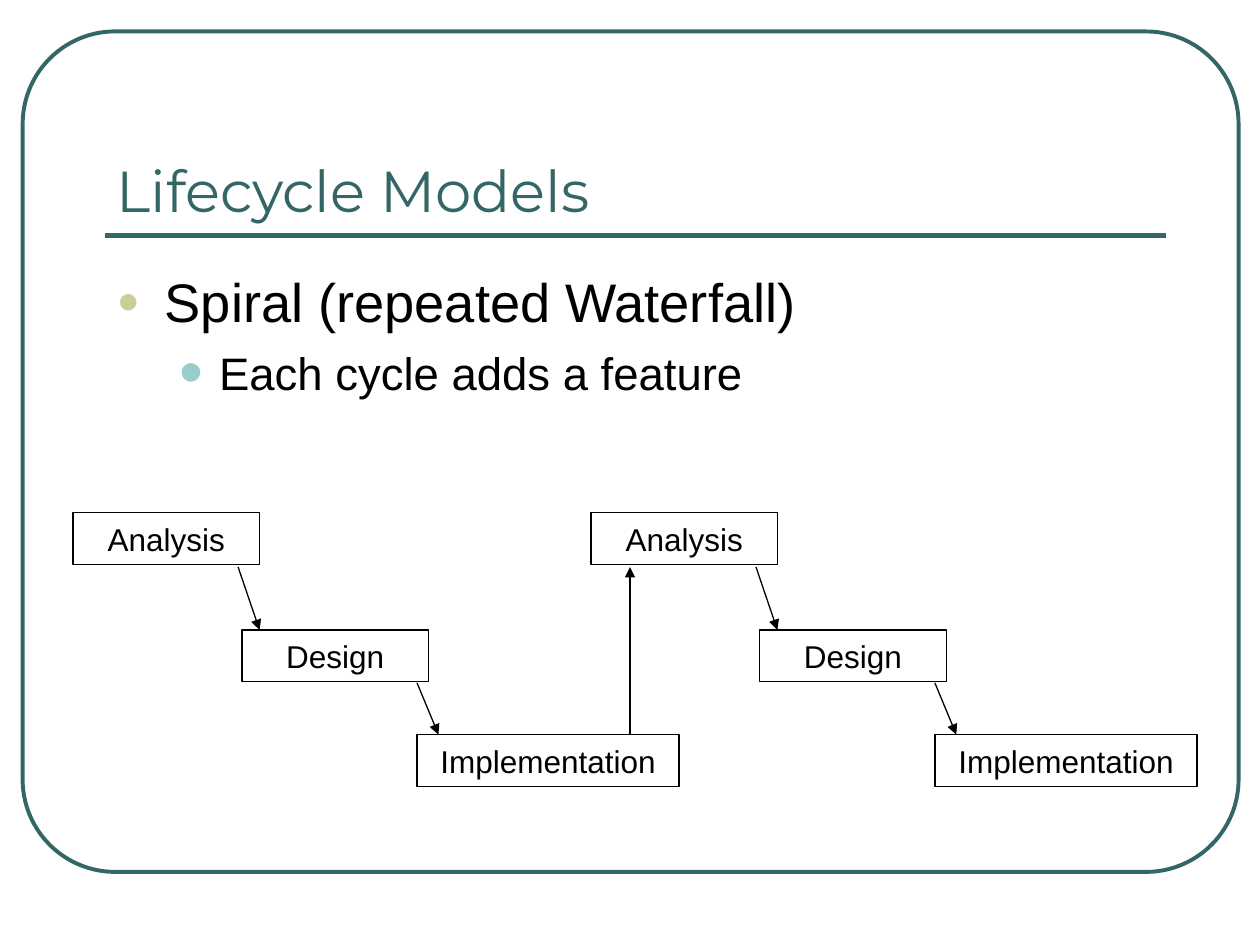
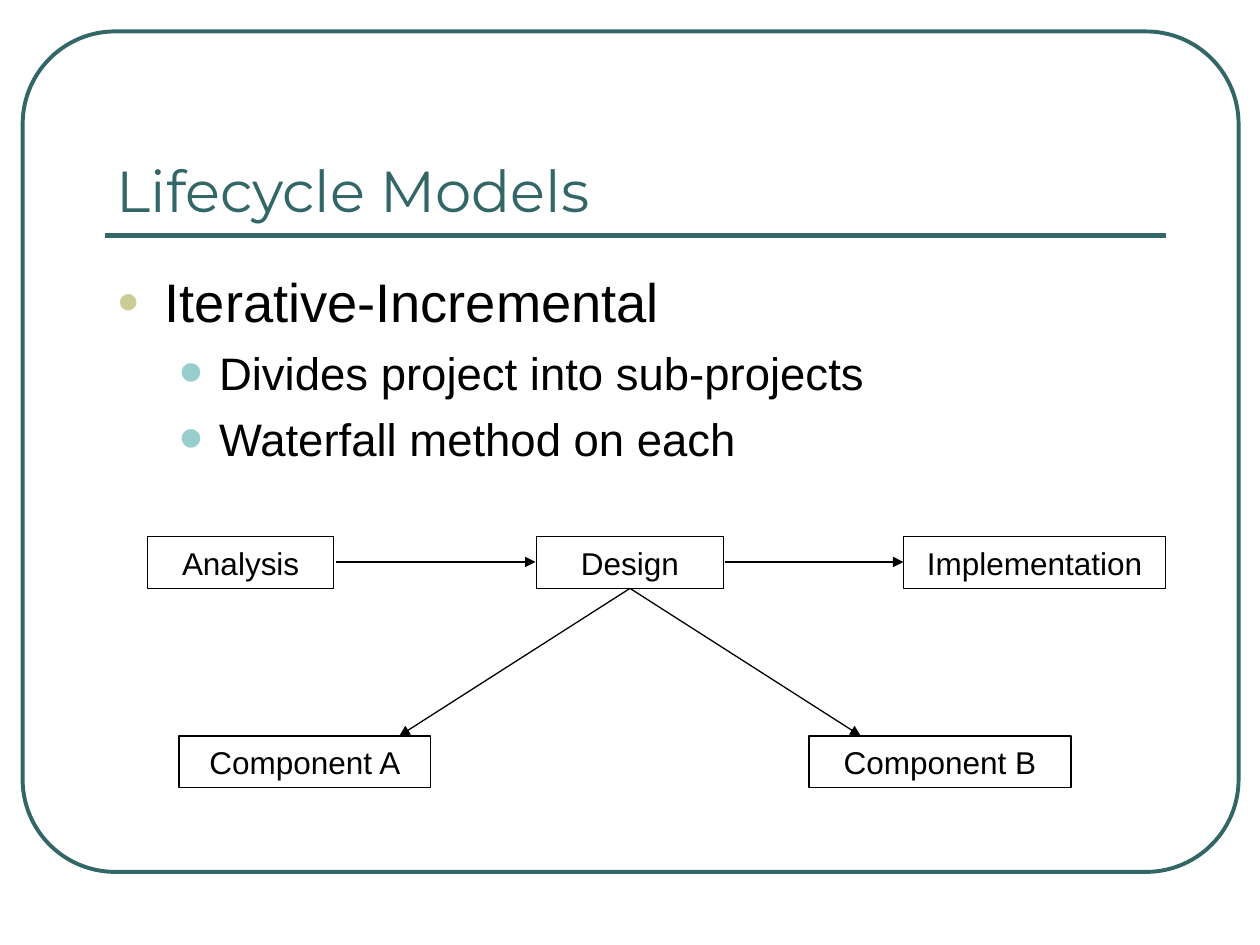
from lxml import etree
from pptx import Presentation
from pptx import util as u
from pptx.dml.color import RGBColor
from pptx.enum import shapes, text
from pptx.oxml import ns

TEAL = RGBColor(0x33, 0x66, 0x66)
BLACK = RGBColor(0, 0, 0)
KHAKI = RGBColor(0xCC, 0xCC, 0x99)
AQUA = RGBColor(0x97, 0xCD, 0xCC)

BOX_H = 0.41
# Bullet levels: size, space before, left margin, hanging indent, mark, mark colour, mark size %
LEVELS = [
    (31, 6, 0.38, 0.38, "●", KHAKI, 70),
    (26, 6.5, 0.81, 0.31, "•", AQUA, 150),
]


def add_text(tf, content, size=18, font="Arial", color=BLACK, align=text.PP_ALIGN.LEFT,
             anchor=text.MSO_ANCHOR.TOP, level=None):
    """Write one paragraph, using the first empty one if there is one."""
    p = tf.paragraphs[0] if not tf.paragraphs[0].runs else tf.add_paragraph()
    tf.word_wrap = True
    tf.vertical_anchor = anchor
    p.alignment = align
    if level is not None:
        size, before, left, hang, mark, mark_color, mark_size = LEVELS[level]
        p.level = level
        p.space_before = u.Pt(before)
        pPr = p._p.get_or_add_pPr()
        pPr.set("marL", str(u.Inches(left)))
        pPr.set("indent", str(-u.Inches(hang)))
        clr = etree.SubElement(pPr, ns.qn("a:buClr"))
        etree.SubElement(clr, ns.qn("a:srgbClr"), val=str(mark_color))
        etree.SubElement(pPr, ns.qn("a:buSzPct"), val=str(mark_size * 1000))
        etree.SubElement(pPr, ns.qn("a:buFont"), typeface="Arial")
        etree.SubElement(pPr, ns.qn("a:buChar"), char=mark)
    r = p.add_run()
    r.text = content
    r.font.size = u.Pt(size)
    r.font.name = font
    r.font.color.rgb = color


def add_line(s, x1, y1, x2, y2, color=BLACK, width=0.75, arrow=True):
    c = s.shapes.add_connector(shapes.MSO_CONNECTOR.STRAIGHT, *map(u.Inches, (x1, y1, x2, y2)))
    c.line.color.rgb = color
    c.line.width = u.Pt(width)
    if arrow:
        etree.SubElement(c.line._get_or_add_ln(), ns.qn("a:tailEnd"), type="triangle")
    etree.SubElement(c._element.spPr, ns.qn("a:effectLst"))


# Spiral: the same three-step waterfall, run twice
spiral_boxes, spiral_arrows = [], []
for dx in (0, 4.11):
    spiral_boxes += [
        ("Analysis", 0.58 + dx, 4.07, 1.48),
        ("Design", 1.92 + dx, 5, 1.48),
        ("Implementation", 3.31 + dx, 5.83, 2.08),
    ]
    spiral_arrows += [
        (1.89 + dx, 4.5, 2.06 + dx, 5),
        (3.31 + dx, 5.42, 3.48 + dx, 5.83),
    ]
spiral_arrows.append((5, 5.83, 5, 4.5))

# Iterative: one row of steps, with the design split into components
iterative_boxes = [
    ("Analysis", 1.17, 4.26, 1.48),
    ("Design", 4.26, 4.26, 1.48),
    ("Implementation", 7.17, 4.26, 2.08),
    ("Component A", 1.42, 5.84, 2),
    ("Component B", 6.42, 5.84, 2.08),
]
iterative_arrows = [(2.67, 4.46, 4.25, 4.46), (5.75, 4.46, 7.17, 4.46)]
iterative_arrows += [(5, 4.67, 5 + dx, 5.84) for dx in (-1.83, 1.83)]

SLIDES = [
    ([("Spiral (repeated Waterfall)", 0), ("Each cycle adds a feature", 1)],
     spiral_boxes, spiral_arrows),
    ([("Iterative-Incremental", 0), ("Divides project into sub-projects", 1),
      ("Waterfall method on each", 1)],
     iterative_boxes, iterative_arrows),
]

prs = Presentation()
prs.slide_width, prs.slide_height = u.Inches(10), u.Inches(7.5)

for bullets, boxes, arrows in SLIDES:
    s = prs.slides.add_slide(prs.slide_layouts[6])

    # Frame and title rule
    frame = s.shapes.add_shape(shapes.MSO_SHAPE.ROUNDED_RECTANGLE,
                               *map(u.Inches, (0.18, 0.25, 9.65, 6.67)))
    frame.adjustments[0] = 0.11
    frame.shadow.inherit = False
    frame.fill.background()
    frame.line.color.rgb = TEAL
    frame.line.width = u.Pt(2.25)
    add_line(s, 0.83, 1.87, 9.25, 1.87, color=TEAL, width=3, arrow=False)

    # Title
    title = s.shapes.add_textbox(*map(u.Inches, (0.83, 0.58, 8.42, 1.25)))
    add_text(title.text_frame, "Lifecycle Models", size=33, font="Montserrat", color=TEAL,
             anchor=text.MSO_ANCHOR.BOTTOM)

    # Bullets
    body = s.shapes.add_textbox(*map(u.Inches, (0.83, 2.08, 8.42, 4.42)))
    for content, level in bullets:
        add_text(body.text_frame, content, level=level)

    # Diagram
    for label, x, y, w in boxes:
        sp = s.shapes.add_shape(shapes.MSO_SHAPE.RECTANGLE, *map(u.Inches, (x, y, w, BOX_H)))
        sp.shadow.inherit = False
        sp.fill.background()
        sp.line.color.rgb = BLACK
        sp.line.width = u.Pt(0.75)
        add_text(sp.text_frame, label, align=text.PP_ALIGN.CENTER,
                 anchor=text.MSO_ANCHOR.MIDDLE)
    for ends in arrows:
        add_line(s, *ends)

prs.save("out.pptx")
